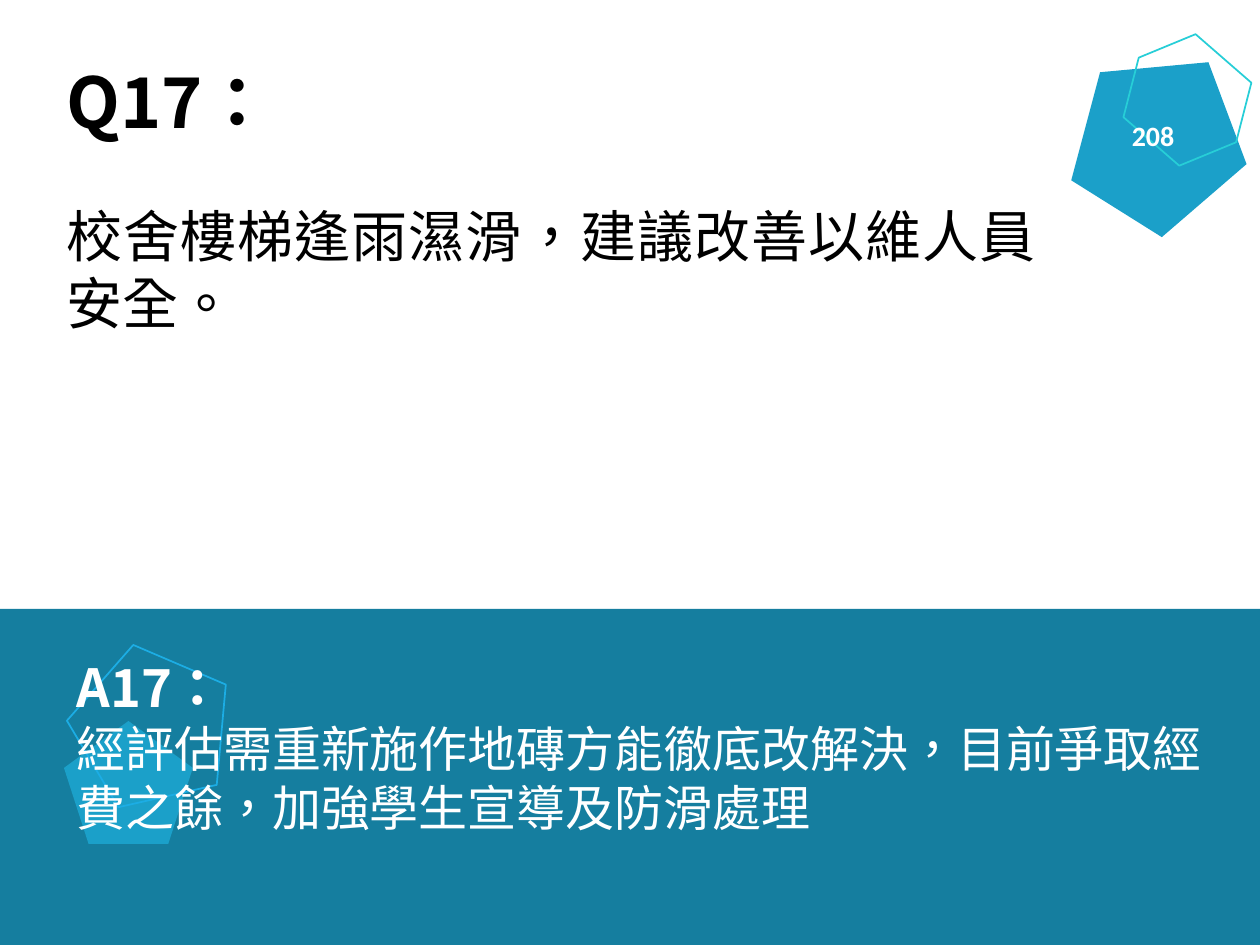
from pptx import Presentation
from pptx import util as u
from pptx.dml.color import RGBColor
from pptx.enum import lang, shapes, text

PX = 914400 // 126
HUES = {"band": "157E9F", "fill": "1BA0C9", "blue": "1CADE4",
        "teal": "27CED7", "ink": "000000", "white": "FFFFFF"}
KIND = shapes.MSO_SHAPE
ALIGN = text.PP_ALIGN


def hue(name):
    return RGBColor.from_string(HUES[name])


def px(*vals):
    return [v * PX for v in vals]


def draw(slide, kind, box, fill=None, line=None, turn=0):
    """Add a preset shape that is either filled or outlined."""
    item = slide.shapes.add_shape(kind, *px(*box))
    item.shadow.inherit = False
    item.rotation = turn
    if fill:
        item.fill.solid()
        item.fill.fore_color.rgb = hue(fill)
    else:
        item.fill.background()
    if line:
        item.line.color.rgb = hue(line)
        item.line.width = u.Pt(1)
    else:
        item.line.fill.background()


def frame(slide, box, wrap=True):
    body = slide.shapes.add_textbox(*px(*box)).text_frame
    body.word_wrap = wrap
    return body


def write(para, words, ink, **form):
    run = para.add_run()
    run.text = words
    run.font.color.rgb = hue(ink)
    form["language_id"] = lang.MSO_LANGUAGE_ID.TRADITIONAL_CHINESE
    for key, val in form.items():
        setattr(run.font, key, val)


def ask(slide):
    body = frame(slide, (54, 52, 995, 292))
    write(body.paragraphs[0], "Q17：", "ink",
          size=u.Pt(40), name="Noto Sans CJK SC", bold=True)
    para = body.add_paragraph()
    para.alignment = ALIGN.JUSTIFY
    para.space_before = u.Pt(34)
    write(para, "校舍樓梯逢雨濕滑，建議改善以維人員安全。", "ink",
          size=u.Pt(32), name="Calibri", bold=False)


def reply(slide):
    para = frame(slide, (64, 649, 1171, 195)).paragraphs[0]
    write(para, "A17：", "white",
          size=u.Pt(30), name="Noto Sans CJK SC", bold=True)
    para.add_line_break()
    write(para, "經評估需重新施作地磚方能徹底改解決，目前爭取經費之餘，加強學生宣導及防滑處理",
          "white", size=u.Pt(28), name="Arial", bold=False)


def number(slide):
    para = frame(slide, (1119, 112, 68, 81), wrap=False).paragraphs[0]
    para.alignment = ALIGN.CENTER
    write(para, "208", "white", size=u.Pt(16), name="Calibri", bold=True)


def main():
    deck = Presentation()
    deck.slide_width, deck.slide_height = px(1260, 945)
    slide = deck.slides.add_slide(deck.slide_layouts[6])
    five = KIND.REGULAR_PENTAGON
    draw(slide, KIND.RECTANGLE, (0, 609, 1260, 336), fill="band")
    draw(slide, five, (1076, 49, 173, 173), fill="fill", turn=32.1)
    draw(slide, five, (64, 721, 129, 123), fill="fill")
    draw(slide, five, (69, 643, 163, 155), line="blue", turn=347.2)
    draw(slide, KIND.HEXAGON, (1123, 45, 129, 110), line="teal", turn=41)
    ask(slide)
    reply(slide)
    number(slide)
    deck.save("out.pptx")


if __name__ == "__main__":
    main()
